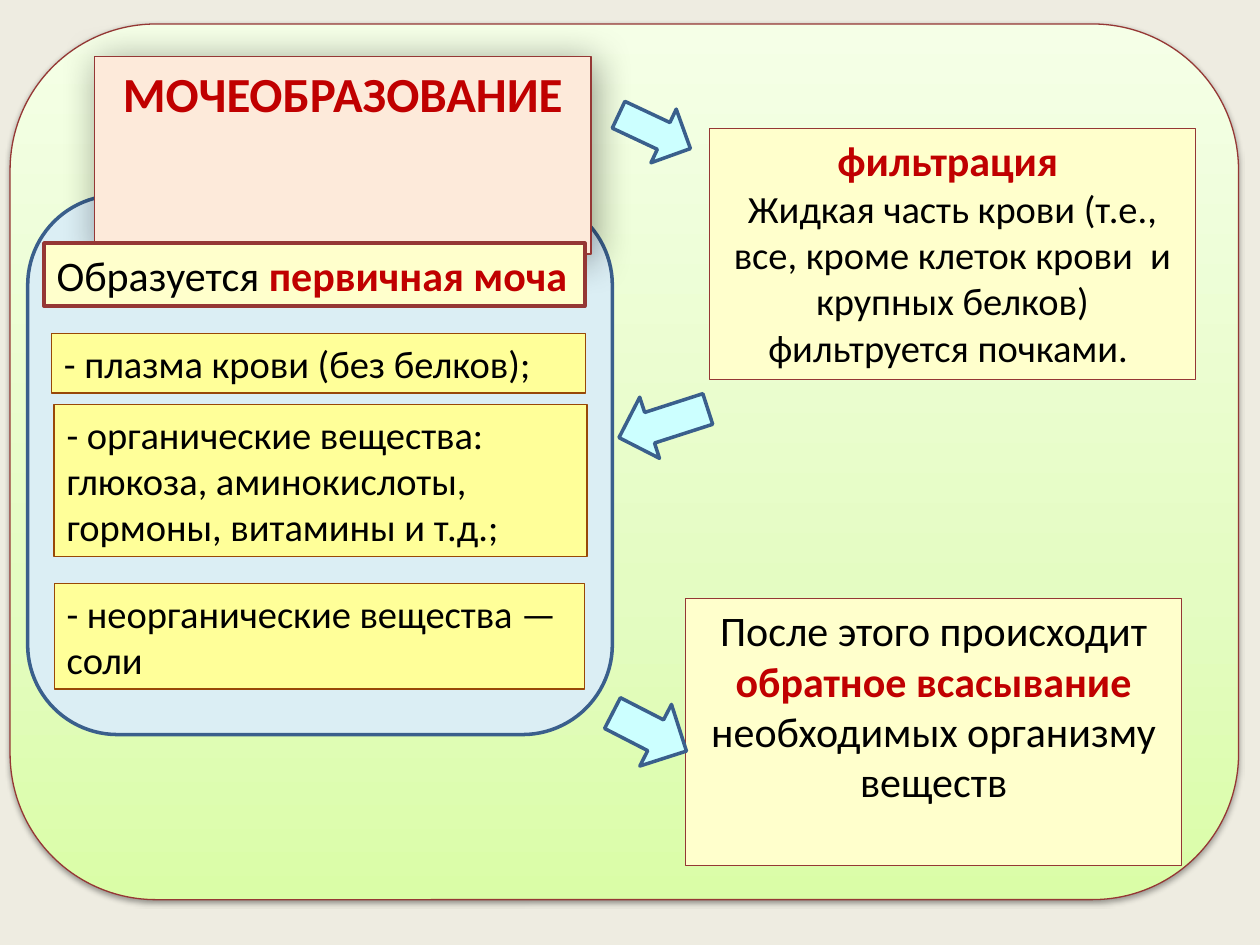
from copy import deepcopy

from lxml import etree
from pptx import Presentation
from pptx import util as u
from pptx.dml.color import RGBColor
from pptx.enum import shapes, text
from pptx.oxml.ns import qn

COLORS = {
    "background": "EEECE1", "panel": "DBEEF4", "title": "FDEADA",
    "cream": "FFFFCC", "yellow": "FFFF99", "arrow": "CCFFFF",
    "maroon": "953735", "brown": "984807", "blue": "3A5F8C",
    "red": "C00000", "black": "000000",
    "lime": "DAFDA7", "pale lime": "E4FCC2", "mint": "F5FFE7",
}
SHAPE = shapes.MSO_SHAPE
LEFT, CENTER = text.PP_ALIGN.LEFT, text.PP_ALIGN.CENTER


def rgb(name):
    return RGBColor.from_string(COLORS[name])


class Deck:
    font = "Calibri"

    def __init__(self):
        self.prs = Presentation()
        self.prs.slide_width, self.prs.slide_height = u.Inches(10), u.Inches(7.5)
        self.s = self.prs.slides.add_slide(self.prs.slide_layouts[5])
        fill = self.s.background.fill
        fill.solid()
        fill.fore_color.rgb = rgb("background")

    def style(self, sp, fill, line, width):
        sp.shadow.inherit = False
        sp.fill.solid()
        sp.fill.fore_color.rgb = rgb(fill)
        sp.line.color.rgb = rgb(line)
        sp.line.width = u.Pt(width)

    def shape(self, kind, at, fill, line="blue", width=2, rotation=0):
        sp = self.s.shapes.add_shape(kind, *map(u.Inches, at))
        self.style(sp, fill, line, width)
        sp.rotation = rotation
        return sp

    def gradient(self, sp, stops, angle):
        sp.fill.gradient()
        sp.fill.gradient_angle = angle
        gs = sp.element.spPr.find(".//" + qn("a:gsLst"))
        while len(gs) < len(stops):
            gs.append(deepcopy(gs[0]))
        for stop, (position, color) in zip(sp.fill.gradient_stops, stops):
            stop.position = position
            stop.color.rgb = rgb(color)

    def shadow(self, sp, alpha, blur, distance, angle):
        effects = sp.element.spPr.find(qn("a:effectLst"))
        shadow = etree.SubElement(
            effects, qn("a:outerShdw"), blurRad=str(u.Pt(blur)),
            dist=str(u.Pt(distance)), dir=str(angle * 60000), rotWithShape="0")
        color = etree.SubElement(shadow, qn("a:srgbClr"), val=COLORS["black"])
        etree.SubElement(color, qn("a:alpha"), val=str(alpha * 1000))

    def fill_text(self, sp, paragraphs, align):
        tf = sp.text_frame
        tf.word_wrap = True
        tf.auto_size = text.MSO_AUTO_SIZE.SHAPE_TO_FIT_TEXT
        tf.vertical_anchor = text.MSO_ANCHOR.TOP
        for i, (size, runs) in enumerate(paragraphs):
            p = tf.add_paragraph() if i else tf.paragraphs[0]
            p.alignment = align
            p.font.name, p.font.size = self.font, u.Pt(size)
            for words, strong in runs:
                r = p.add_run()
                r.text = words
                r.font.bold = strong
                r.font.color.rgb = rgb("red" if strong else "black")

    def box(self, at, paragraphs, fill="cream", line="maroon", width=0.75, align=LEFT):
        sp = self.shape(SHAPE.RECTANGLE, at, fill, line, width)
        self.fill_text(sp, paragraphs, align)

    def title(self, at, words):
        sp = self.s.shapes.title
        sp.left, sp.top, sp.width, sp.height = map(u.Inches, at)
        self.style(sp, "title", "maroon", 0.75)
        self.shadow(sp, 40, 22, 3, 45)
        self.fill_text(sp, [(28, [(words, True)])], CENTER)
        self.s.shapes.element.append(sp.element)


def main():
    deck = Deck()
    card = deck.shape(SHAPE.ROUNDED_RECTANGLE, (0.08, 0.19, 9.75, 6.95), "mint", "maroon", 0.75)
    deck.gradient(card, [(0, "lime"), (0.35, "pale lime"), (1, "mint")], 90)
    deck.shadow(card, 38, 3.1, 1.6, 90)
    deck.shape(SHAPE.ROUNDED_RECTANGLE, (0.22, 1.55, 4.64, 4.28), "panel")
    deck.title((0.75, 0.45, 3.94, 0.57), "МОЧЕОБРАЗОВАНИЕ")

    deck.box((5.63, 1.02, 3.86, 1.99), [
        (24, [("фильтрация ", True)]),
        (22, [("Жидкая часть крови (т.е., все, кроме клеток крови  и крупных белков) "
               "фильтруется почками. ", False)]),
    ], align=CENTER)
    deck.box((0.35, 1.93, 4.29, 0.5),
             [(24, [("Образуется ", False), ("первичная моча", True)])], width=2.25)
    deck.box((5.44, 4.75, 3.94, 2.12), [
        (24, [("После этого происходит ", False), ("обратное всасывание ", True),
              ("необходимых организму веществ", False)]),
    ], align=CENTER)

    for kind, at, rotation in [
        (SHAPE.RIGHT_ARROW, (4.88, 0.81, 0.63, 0.47), 25.2),
        (SHAPE.DOWN_ARROW, (5.01, 2.99, 0.51, 0.74), 72.1),
        (SHAPE.DOWN_ARROW, (4.88, 5.48, 0.55, 0.66), 297.2),
    ]:
        deck.shape(kind, at, "arrow", rotation=rotation)

    for at, lines in [
        ((0.41, 2.65, 4.24, 0.47), ["- плазма крови (без белков);"]),
        ((0.43, 3.21, 4.23, 1.21), ["- органические вещества:", "глюкоза, аминокислоты,",
                                    "гормоны, витамины и т.д.;"]),
        ((0.43, 4.63, 4.21, 0.84), ["- неорганические вещества —", "соли"]),
    ]:
        deck.box(at, [(22, [(line, False)]) for line in lines], "yellow", "brown")

    deck.prs.save("out.pptx")


if __name__ == "__main__":
    main()
